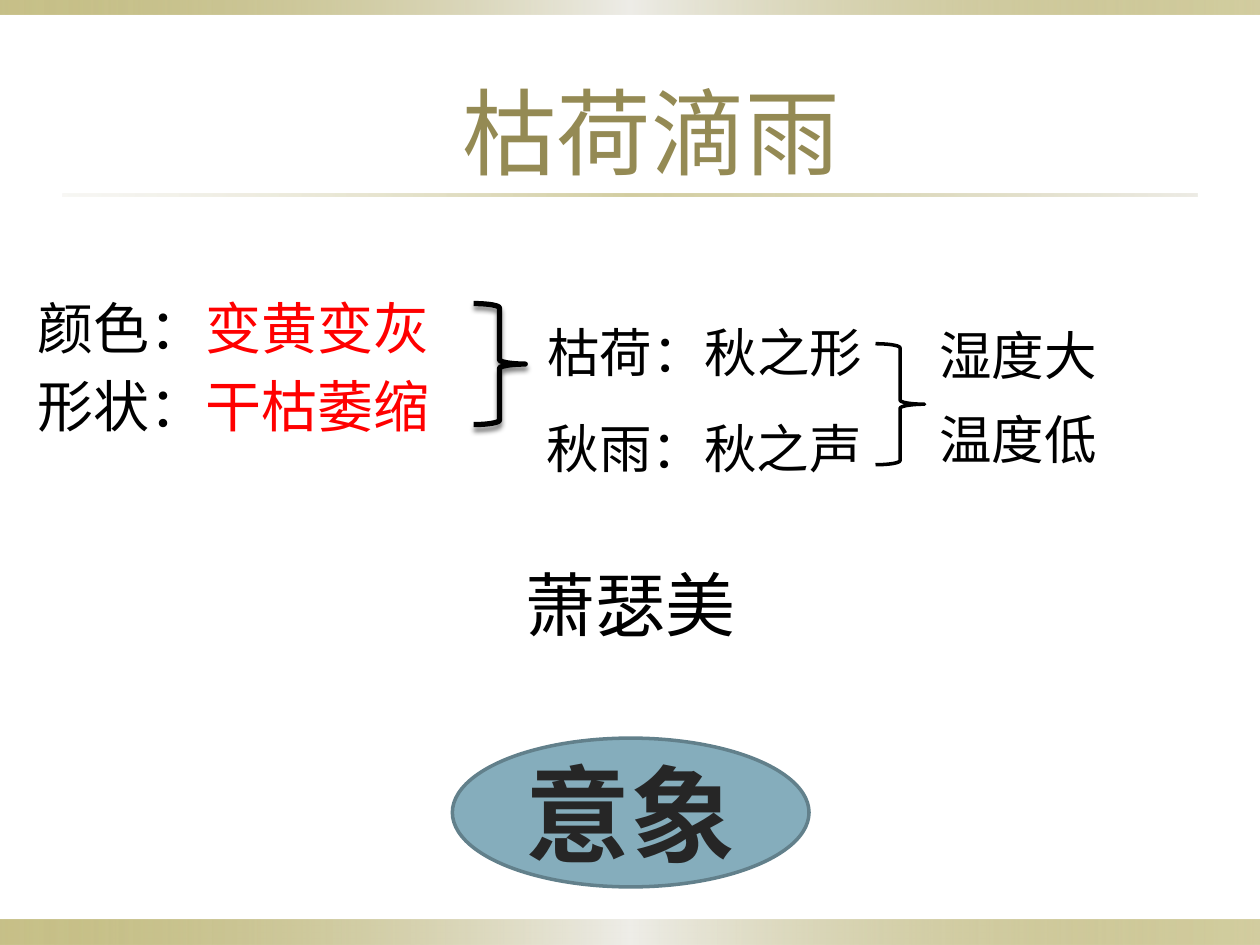
"""Build the slide on the autumn imagery of withered lotus and dripping rain."""
from dataclasses import dataclass

from lxml import etree
from pptx import Presentation
from pptx.dml.color import RGBColor
from pptx.enum.shapes import MSO_SHAPE
from pptx.enum.text import MSO_ANCHOR, PP_ALIGN
from pptx.oxml.ns import qn
from pptx.util import Cm, Pt

RECTANGLE, OVAL, BRACE = MSO_SHAPE.RECTANGLE, MSO_SHAPE.OVAL, MSO_SHAPE.RIGHT_BRACE
TOP, MIDDLE = MSO_ANCHOR.TOP, MSO_ANCHOR.MIDDLE
LEFT, CENTER = PP_ALIGN.LEFT, PP_ALIGN.CENTER
BLACK = RGBColor(0x00, 0x00, 0x00)
RED = RGBColor(0xFF, 0x00, 0x00)
KHAKI = RGBColor(0x94, 0x8A, 0x54)
OLIVE = RGBColor(0x91, 0x84, 0x15)
PALE = RGBColor(0xEE, 0xED, 0xE8)
SAND = RGBColor(0xDC, 0xD9, 0xCC)
BLUE = RGBColor(0x85, 0xAD, 0xBC)
DARK_BLUE = RGBColor(0x62, 0x80, 0x8B)
CHARCOAL = RGBColor(0x26, 0x26, 0x26)
CJK_FONT, LATIN_FONT = "Noto Sans CJK SC", "Cabin"
BAR_STOPS = ((0, OLIVE, 50), (50, PALE, 100), (100, OLIVE, 40))
RULE_STOPS = ((0, SAND, 20), (50, OLIVE, 40), (100, SAND, 50))


@dataclass
class Box:
    left: float
    top: float
    width: float
    height: float

    def lengths(self) -> tuple:
        return Cm(self.left), Cm(self.top), Cm(self.width), Cm(self.height)


@dataclass
class Band:
    box: Box
    stops: tuple


@dataclass
class Brace:
    box: Box
    weight: float
    shadow: bool


@dataclass
class Label:
    box: Box
    lines: tuple
    size: int = 30


BANDS = (
    Band(Box(0, 18.54, 25.4, 0.51), BAR_STOPS),
    Band(Box(0, 0, 25.4, 0.3), BAR_STOPS),
    Band(Box(1.27, 3.91, 22.86, 0.05), RULE_STOPS),
)
BRACES = (
    Brace(Box(9.55, 6.12, 1.04, 2.44), 3, True),
    Brace(Box(17.65, 6.93, 0.99, 2.44), 2, False),
)
LABELS = (
    Label(Box(8.71, 5.79, 11, 2.59), ("枯荷：秋之形",)),
    Label(Box(8.89, 7.72, 10.62, 2.59), ("秋雨：秋之声",)),
    Label(Box(15.8, 5.69, 9.45, 4.62), ("湿度大", "温度低")),
    Label(Box(7.98, 10.87, 9.45, 2.59), ("萧瑟美",), 40),
)
TRAITS = (("颜色：", "变黄变灰"), ("形状：", "干枯萎缩"))


def add_plain_shape(slide, kind, box: Box):
    shape = slide.shapes.add_shape(kind, *box.lengths())
    shape.shadow.inherit = False
    shape.fill.background()
    shape.line.fill.background()
    return shape


def add_color(parent, color: RGBColor, opacity: int) -> None:
    element = etree.SubElement(parent, qn("a:srgbClr"), val=str(color))
    etree.SubElement(element, qn("a:alpha"), val=str(opacity * 1000))


def add_band(slide, band: Band) -> None:
    shape = add_plain_shape(slide, RECTANGLE, band.box)
    shape.fill.gradient()
    shape.fill.gradient_angle = 0
    stop_list = shape.element.spPr.find(".//" + qn("a:gsLst"))
    for old_stop in list(stop_list):
        stop_list.remove(old_stop)
    for position, color, opacity in band.stops:
        stop = etree.SubElement(stop_list, qn("a:gs"), pos=str(position * 1000))
        add_color(stop, color, opacity)


def add_brace(slide, brace: Brace) -> None:
    shape = add_plain_shape(slide, BRACE, brace.box)
    shape.line.color.rgb = BLACK
    shape.line.width = Pt(brace.weight)
    if brace.shadow:
        effects = shape.element.spPr.find(qn("a:effectLst"))
        shadow = etree.SubElement(
            effects, qn("a:outerShdw"), blurRad=str(Pt(2.8)), dist=str(Pt(2.5)),
            dir=str(90 * 60000), rotWithShape="0")
        add_color(shadow, BLACK, 50)


def write_text(shape, lines: tuple, *, size: int, colors: tuple = (BLACK,),
               font: str = CJK_FONT, bold: bool = False, align=CENTER,
               anchor=MIDDLE, gap: float = 0, pitch: float | None = None) -> None:
    frame = shape.text_frame
    frame.word_wrap = True
    frame.vertical_anchor = anchor
    for index, pieces in enumerate(lines):
        paragraph = frame.add_paragraph() if index else frame.paragraphs[0]
        paragraph.alignment = align
        paragraph.space_before = Pt(gap if index else 0)
        if pitch:
            paragraph.line_spacing = Pt(pitch)
        for piece, color in zip(pieces, colors):
            run = paragraph.add_run()
            run.text = piece
            run.font.size = Pt(size)
            run.font.bold = bold
            run.font.color.rgb = color
            run.font.name = font
            latin = run.font._element.find(qn("a:latin"))
            latin.addnext(etree.Element(qn("a:ea"), typeface=font))


def add_label(slide, label: Label) -> None:
    shape = add_plain_shape(slide, OVAL, label.box)
    write_text(shape, tuple((line,) for line in label.lines), size=label.size, gap=12)


def main() -> None:
    presentation = Presentation()
    presentation.slide_width, presentation.slide_height = Cm(25.4), Cm(19.05)
    slide = presentation.slides.add_slide(presentation.slide_layouts[5])

    for band in BANDS:
        add_band(slide, band)

    title = slide.shapes.title
    title.left, title.top, title.width, title.height = Box(1.7, 1.19, 22.86, 3.18).lengths()
    write_text(title, (("枯荷滴雨",),), size=54, colors=(KHAKI,), anchor=TOP, pitch=70)

    traits = slide.shapes.add_textbox(*Box(0.51, 5.69, 22.86, 10.29).lengths())
    traits.text_frame.margin_top = Cm(0.25)
    write_text(traits, TRAITS, size=32, colors=(BLACK, RED), align=LEFT,
               anchor=TOP, gap=6.4, pitch=38)

    for brace in BRACES:
        add_brace(slide, brace)
    for label in LABELS:
        add_label(slide, label)

    imagery = add_plain_shape(slide, OVAL, Box(9.12, 14.88, 7.19, 3))
    imagery.fill.solid()
    imagery.fill.fore_color.rgb = BLUE
    imagery.line.color.rgb = DARK_BLUE
    imagery.line.width = Pt(2)
    write_text(imagery, (("意象",),), size=60, colors=(CHARCOAL,), font=LATIN_FONT, bold=True)

    presentation.save("out.pptx")


if __name__ == "__main__":
    main()
